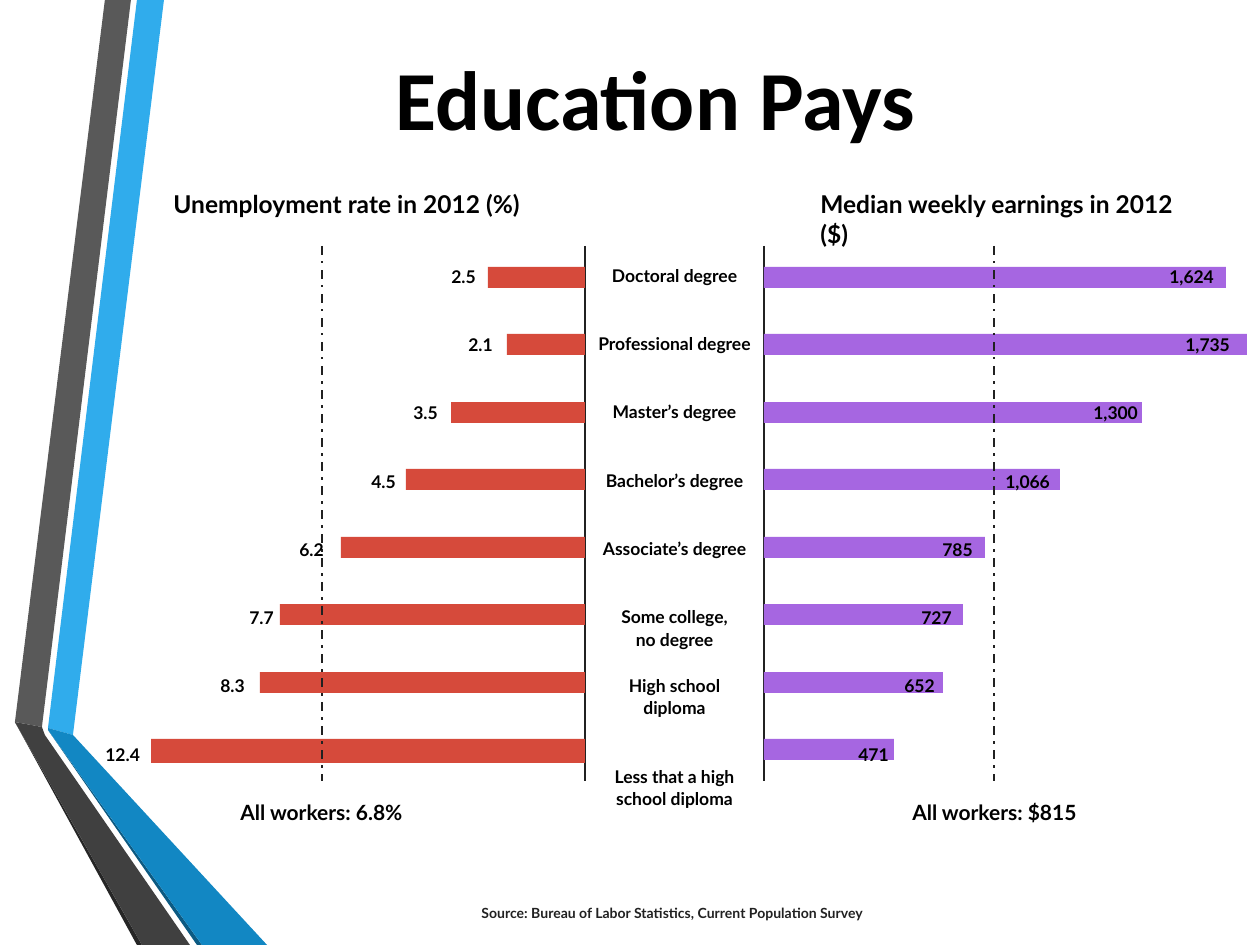
from lxml import etree
from pptx import Presentation
from pptx.dml.color import RGBColor
from pptx.enum.dml import MSO_LINE
from pptx.enum.shapes import MSO_CONNECTOR, MSO_SHAPE
from pptx.enum.text import MSO_ANCHOR, PP_ALIGN
from pptx.oxml.ns import qn
from pptx.util import Emu, Inches, Pt

SCALE = Inches(1) / 126
LEFT, CENTER = PP_ALIGN.LEFT, PP_ALIGN.CENTER
TOP, MIDDLE = MSO_ANCHOR.TOP, MSO_ANCHOR.MIDDLE
STRAIGHT, RECTANGLE = MSO_CONNECTOR.STRAIGHT, MSO_SHAPE.RECTANGLE
DASH_DOT = MSO_LINE.DASH_DOT
LEADING, ROW_GAP = 13, 26
COLORS = {
    "text": "000000", "rule": "212121",
    "unemployment": "D64A3B", "earnings": "A666E1",
    "sky": "30ACEC", "blue": "1287C3", "navy": "0C5A82",
    "gray": "595959", "charcoal": "404040", "black": "262626",
}
RIBBONS = [
    ("sky", [(33, 728), (58, 735), (149, 0), (122, 0)]),
    ("gray", [(116, 0), (90, 0), (0, 722), (27, 727)]),
    ("black", [(0, 722), (122, 945), (127, 945)]),
    ("navy", [(33, 730), (182, 945), (187, 945)]),
    ("blue", [(33, 728), (33, 730), (187, 945), (252, 945), (58, 735)]),
    ("charcoal", [(175, 945), (30, 735), (27, 727), (0, 722), (127, 945)]),
]
CATEGORIES = [
    ("Doctoral degree", 0), ("Professional degree", ROW_GAP),
    ("Master’s degree", ROW_GAP), ("Bachelor’s degree", ROW_GAP),
    ("Associate’s degree", ROW_GAP), ("Some college,", ROW_GAP),
    ("no degree", 0), ("High school diploma", LEADING),
    ("Less that a high school diploma", ROW_GAP),
]
UNEMPLOYMENT = [
    ("2.5", 97, 350), ("2.1", 78, 367), ("3.5", 134, 312), ("4.5", 179, 270),
    ("6.2", 244, 198), ("7.7", 305, 148), ("8.3", 325, 119), ("12.4", 434, 4),
]
EARNINGS = [
    ("1,624", 462, 391), ("1,735", 483, 407), ("1,300", 378, 315),
    ("1,066", 296, 227), ("785", 221, 164), ("727", 199, 143),
    ("652", 179, 126), ("471", 130, 80),
]


def px(value):
    return Emu(round(value * SCALE))


def color(name):
    return RGBColor.from_string(COLORS[name])


def add_text(page, box, lines, size, font="Lato", fill="text", align=LEFT,
             anchor=TOP, leading=None, gaps=None, indents=None):
    frame = page.shapes.add_textbox(*map(px, box)).text_frame
    frame.word_wrap = True
    frame.vertical_anchor = anchor
    for index, line in enumerate(lines):
        para = frame.paragraphs[0] if index == 0 else frame.add_paragraph()
        para.alignment = align
        if leading:
            para.line_spacing = Pt(leading)
        if gaps and gaps[index]:
            para.space_before = Pt(gaps[index])
        if indents:
            para._p.get_or_add_pPr().set("marL", str(px(indents[index])))
        span = para.add_run()
        span.text = line
        span.font.name, span.font.size, span.font.bold = font, Pt(size), True
        span.font.color.rgb = color(fill)


def paint(shape, fill):
    shape.shadow.inherit = False
    shape.fill.solid()
    shape.fill.fore_color.rgb = color(fill)
    shape.line.fill.background()


def add_rule(page, x, top, bottom, dash=None):
    rule = page.shapes.add_connector(STRAIGHT, px(x), px(top), px(x), px(bottom))
    rule.line.color.rgb = color("rule")
    rule.line.width = Pt(1.25)
    if dash:
        rule.line.dash_style = dash
    etree.SubElement(rule._element.spPr, qn("a:effectLst"))


def add_ribbons(page, box):
    left, top = box[:2]
    for fill, points in RIBBONS:
        builder = page.shapes.build_freeform(*points[0], scale=SCALE)
        builder.add_line_segments(points[1:], close=True)
        paint(builder.convert_to_shape(px(left), px(top)), fill)


def add_bar_panel(page, box, heading, heading_x, rows, fill, average,
                  average_x, footer_x, grows_left=False, last_height=21):
    left, top, width, height = box
    axis = left + width if grows_left else left
    add_text(page, (left + heading_x, top, 405, 43), [heading], 14)
    add_text(page, (left + footer_x, top + 610, 399, 38), [average], 12,
             align=CENTER)
    add_rule(page, axis, top + 63, top + 598)
    for index, (_, length, _) in enumerate(rows):
        start = axis - length if grows_left else axis
        thickness = last_height if index == len(rows) - 1 else 21
        bar = page.shapes.add_shape(
            RECTANGLE, px(start), px(top + 84 + index * 135 // 2),
            px(length), px(thickness))
        paint(bar, fill)
    add_rule(page, left + average_x, top + 63, top + 598, DASH_DOT)
    values, _, indents = zip(*rows)
    gaps = [0] + [ROW_GAP] * (len(rows) - 1)
    add_text(page, (left + 2, top + 75, width - 2, height - 130), values, 10,
             leading=LEADING, gaps=gaps, indents=indents)


def add_categories(page, box):
    names, gaps = zip(*CATEGORIES)
    add_text(page, box, names, 10, align=CENTER, leading=LEADING, gaps=gaps)


def main():
    deck = Presentation()
    deck.slide_width, deck.slide_height = px(1260), px(945)
    page = deck.slides.add_slide(deck.slide_layouts[6])
    add_ribbons(page, (15, 0, 252, 945))
    add_text(page, (94, 18, 1123, 157), ["Education Pays"], 48,
             font="Calibri", align=CENTER, anchor=MIDDLE)
    add_bar_panel(page, (87, 183, 498, 648), "Unemployment rate in 2012 (%)",
                  74, UNEMPLOYMENT, "unemployment", "All workers: 6.8%",
                  235, 35, grows_left=True, last_height=24)
    add_bar_panel(page, (764, 183, 483, 648),
                  "Median weekly earnings in 2012 ($)", 44, EARNINGS,
                  "earnings", "All workers: $815", 230, 31)
    add_categories(page, (585, 257, 179, 541))
    add_text(page, (469, 898, 410, 30),
             ["Source: Bureau of Labor Statistics, Current Population Survey"],
             8, fill="rule")
    deck.save("out.pptx")


if __name__ == "__main__":
    main()
